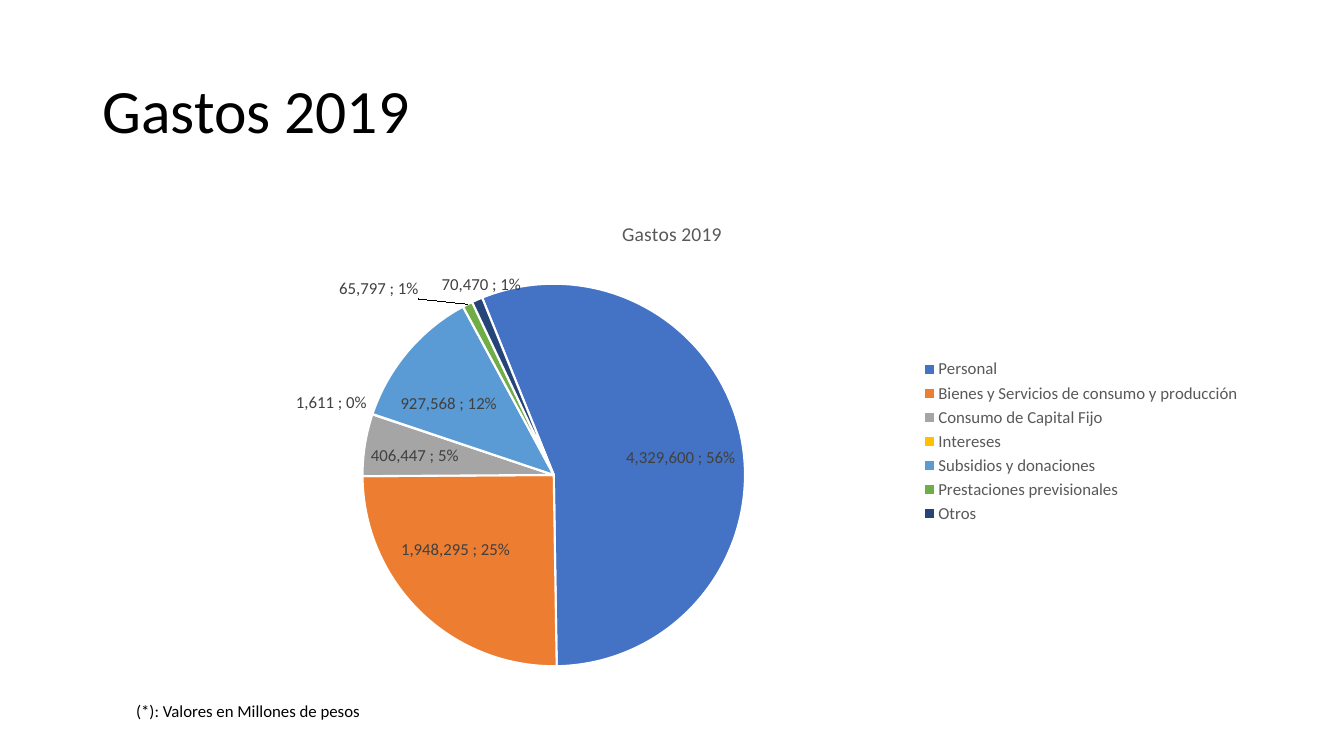
from copy import deepcopy
from dataclasses import dataclass

from lxml import etree
from pptx import Presentation
from pptx.chart.data import CategoryChartData
from pptx.dml.color import RGBColor
from pptx.enum.chart import XL_CHART_TYPE as ChartType
from pptx.enum.chart import XL_LABEL_POSITION as LabelPosition
from pptx.enum.chart import XL_LEGEND_POSITION as LegendPosition
from pptx.enum.text import MSO_ANCHOR, MSO_AUTO_SIZE
from pptx.oxml.ns import qn
from pptx.util import Cm, Pt


@dataclass(frozen=True)
class Theme:
    font: str = "Calibri"
    ink: str = "000000"
    muted: str = "595959"
    label: str = "404040"
    edge: str = "FFFFFF"
    title_size: int = 44
    chart_title_size: int = 14
    small_size: int = 12
    chart_size: int = 10


THEME = Theme()
HEADING = "Gastos 2019"
EXPENSES = [
    ("Personal", 4329600, "4472C4"),
    ("Bienes y Servicios de consumo y producción", 1948295, "ED7D31"),
    ("Consumo de Capital Fijo", 406447, "A5A5A5"),
    ("Intereses", 1611, "FFC000"),
    ("Subsidios y donaciones", 927568, "5B9BD5"),
    ("Prestaciones previsionales", 65797, "70AD47"),
    ("Otros", 70470, "264478"),
]
LABEL_PLACES = {
    0: ("inEnd", 0, 0.02),
    1: ("inEnd", -0.02, -0.1),
    3: ("outEnd", 0, 0),
    4: ("inEnd", -0.01, 0.08),
    5: ("outEnd", -0.04, 0),
    6: ("outEnd", 0.04, 0),
}


def style_font(font, size, color):
    font.name = THEME.font
    font.size = Pt(size)
    font.bold = False
    font.color.rgb = RGBColor.from_string(color)


def add_text(page, box, text, size, anchor, wrap):
    frame = page.shapes.add_textbox(*map(Cm, box)).text_frame
    frame.word_wrap = wrap
    frame.vertical_anchor = anchor
    frame.auto_size = MSO_AUTO_SIZE.NONE if wrap else MSO_AUTO_SIZE.SHAPE_TO_FIT_TEXT
    para = frame.paragraphs[0]
    para.text = text
    style_font(para.font, size, THEME.ink)
    return para


def manual_layout(**settings):
    layout = etree.Element(qn("c:layout"))
    manual = etree.SubElement(layout, qn("c:manualLayout"))
    for name, value in settings.items():
        etree.SubElement(manual, qn(f"c:{name}"), val=str(value))
    return layout


def label_slices(series):
    labels = series.data_labels
    labels.show_value = True
    labels.show_percentage = True
    labels.position = LabelPosition.INSIDE_END
    style_font(labels.font, THEME.small_size, THEME.label)
    group = series._element.find(qn("c:dLbls"))
    separator = etree.Element(qn("c:separator"))
    separator.text = "; "
    leader = group.find(qn("c:showLeaderLines"))
    if leader is None:
        leader = etree.SubElement(group, qn("c:showLeaderLines"))
    leader.set("val", "1")
    leader.addprevious(separator)
    shared = [part for part in group if part is not leader]
    for order, (index, (place, dx, dy)) in enumerate(LABEL_PLACES.items()):
        label = etree.Element(qn("c:dLbl"))
        etree.SubElement(label, qn("c:idx"), val=str(index))
        if dx or dy:
            label.append(manual_layout(x=dx, y=dy))
        label.extend(deepcopy(part) for part in shared)
        label.find(qn("c:dLblPos")).set("val", place)
        group.insert(order, label)


def add_expense_pie(page, box):
    data = CategoryChartData(number_format="#,##0_)")
    data.categories = [name for name, _, _ in EXPENSES]
    data.add_series(HEADING, [amount for _, amount, _ in EXPENSES])
    chart = page.shapes.add_chart(ChartType.PIE, *map(Cm, box), data).chart
    style_font(chart.font, THEME.chart_size, THEME.ink)
    chart.has_title = True
    title = chart.chart_title.text_frame.paragraphs[0]
    title.text = HEADING
    style_font(title.font, THEME.chart_title_size, THEME.muted)

    chart.has_legend = True
    legend = chart.legend
    legend.position = LegendPosition.RIGHT
    legend.include_in_layout = False
    style_font(legend.font, THEME.small_size, THEME.muted)
    legend._element.find(qn("c:legendPos")).addnext(
        manual_layout(xMode="edge", yMode="edge", x=0.713, y=0.32, w=0.28, h=0.36)
    )

    plot = chart.plots[0]
    plot.vary_by_categories = True
    series = plot.series[0]
    for index, (_, _, color) in enumerate(EXPENSES):
        look = series.points[index].format
        look.fill.solid()
        look.fill.fore_color.rgb = RGBColor.from_string(color)
        look.line.color.rgb = RGBColor.from_string(THEME.edge)
        look.line.width = Pt(1.5)
    label_slices(series)

    pie = plot._element
    for angle in pie.findall(qn("c:firstSliceAng")):
        pie.remove(angle)
    etree.SubElement(pie, qn("c:firstSliceAng"), val="338")
    area = pie.getparent()
    for layout in area.findall(qn("c:layout")):
        area.remove(layout)
    area.insert(0, manual_layout(
        layoutTarget="inner", xMode="edge", yMode="edge",
        x=0.233, y=0.17, w=0.33, h=0.8,
    ))


def build_expense_page(page, box):
    left, top, width, height = box
    heading = add_text(page, (left, top, width, 3.68), HEADING,
                       THEME.title_size, MSO_ANCHOR.MIDDLE, True)
    heading.line_spacing = 0.9
    add_expense_pie(page, (left, top + 4.06, width, 12.09))
    add_text(page, (left + 0.85, top + height - 0.76, 6.22, 0.76),
             "(*): Valores en Millones de pesos",
             THEME.small_size, MSO_ANCHOR.TOP, False)


def main():
    deck = Presentation()
    deck.slide_width, deck.slide_height = Cm(33.87), Cm(19.05)
    page = deck.slides.add_slide(deck.slide_layouts[6])
    build_expense_page(page, (2.33, 1.02, 29.21, 17.27))
    deck.save("out.pptx")


if __name__ == "__main__":
    main()
